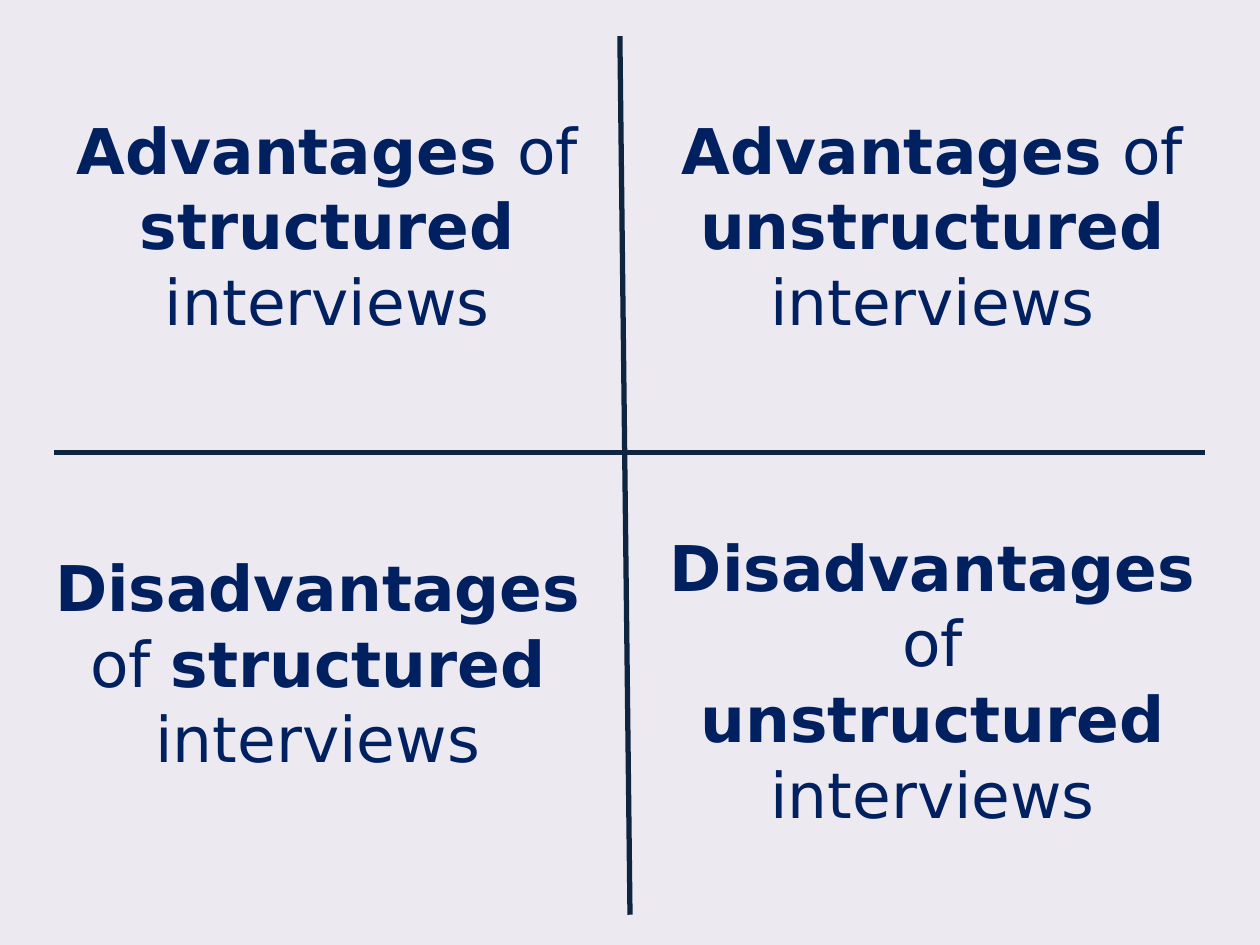
from lxml import etree
from pptx import Presentation
from pptx import util as u
from pptx.dml import color
from pptx.enum import shapes, text
from pptx.oxml import ns

WIDTH, HEIGHT = 10, 7.5
FONT = "DejaVu Sans"
BACKGROUND, NAVY, AXIS = "EDE9F1", "002060", "0F243E"


def rgb(value):
    return color.RGBColor.from_string(value)


def across(share):
    return u.Inches(WIDTH * share / 100)


def down(share):
    return u.Inches(HEIGHT * share / 100)


def add_axis(page, start, end):
    axis = page.shapes.add_connector(
        shapes.MSO_CONNECTOR.STRAIGHT,
        across(start[0]), down(start[1]), across(end[0]), down(end[1]))
    axis.line.color.rgb = rgb(AXIS)
    axis.line.width = u.Pt(3)
    etree.SubElement(axis._element.spPr, ns.qn("a:effectLst"))


def add_span(para, wording, *, bold=False, size=36, fill=NAVY):
    span = para.add_run()
    span.text = wording
    span.font.name = FONT
    span.font.size = u.Pt(size)
    span.font.bold = bold
    span.font.color.rgb = rgb(fill)


def add_quadrant(page, side, kind, *, center, top, width, height):
    box = page.shapes.add_textbox(
        across(center - width / 2), down(top), across(width), down(height))
    frame = box.text_frame
    frame.word_wrap = True
    frame.auto_size = text.MSO_AUTO_SIZE.SHAPE_TO_FIT_TEXT
    para = frame.paragraphs[0]
    para.alignment = text.PP_ALIGN.CENTER
    add_span(para, side, bold=True)
    add_span(para, " of ")
    add_span(para, kind, bold=True)
    add_span(para, " interviews")


def main():
    deck = Presentation()
    deck.slide_width, deck.slide_height = u.Inches(WIDTH), u.Inches(HEIGHT)
    page = deck.slides.add_slide(deck.slide_layouts[6])
    page.background.fill.solid()
    page.background.fill.fore_color.rgb = rgb(BACKGROUND)

    add_axis(page, (49.2, 3.82), (50, 96.8))
    add_axis(page, (4.3, 47.87), (95.65, 47.87))

    upper = dict(top=11.13, width=42, height=25.6)
    add_quadrant(page, "Advantages", "structured", center=25.98, **upper)
    add_quadrant(page, "Disadvantages", "structured",
                 center=25.22, top=57.38, width=44.9, height=25.6)
    add_quadrant(page, "Disadvantages", "unstructured",
                 center=74.02, top=55.25, width=44.9, height=33.6)
    add_quadrant(page, "Advantages", "unstructured", center=74, **upper)
    deck.save("out.pptx")


if __name__ == "__main__":
    main()
